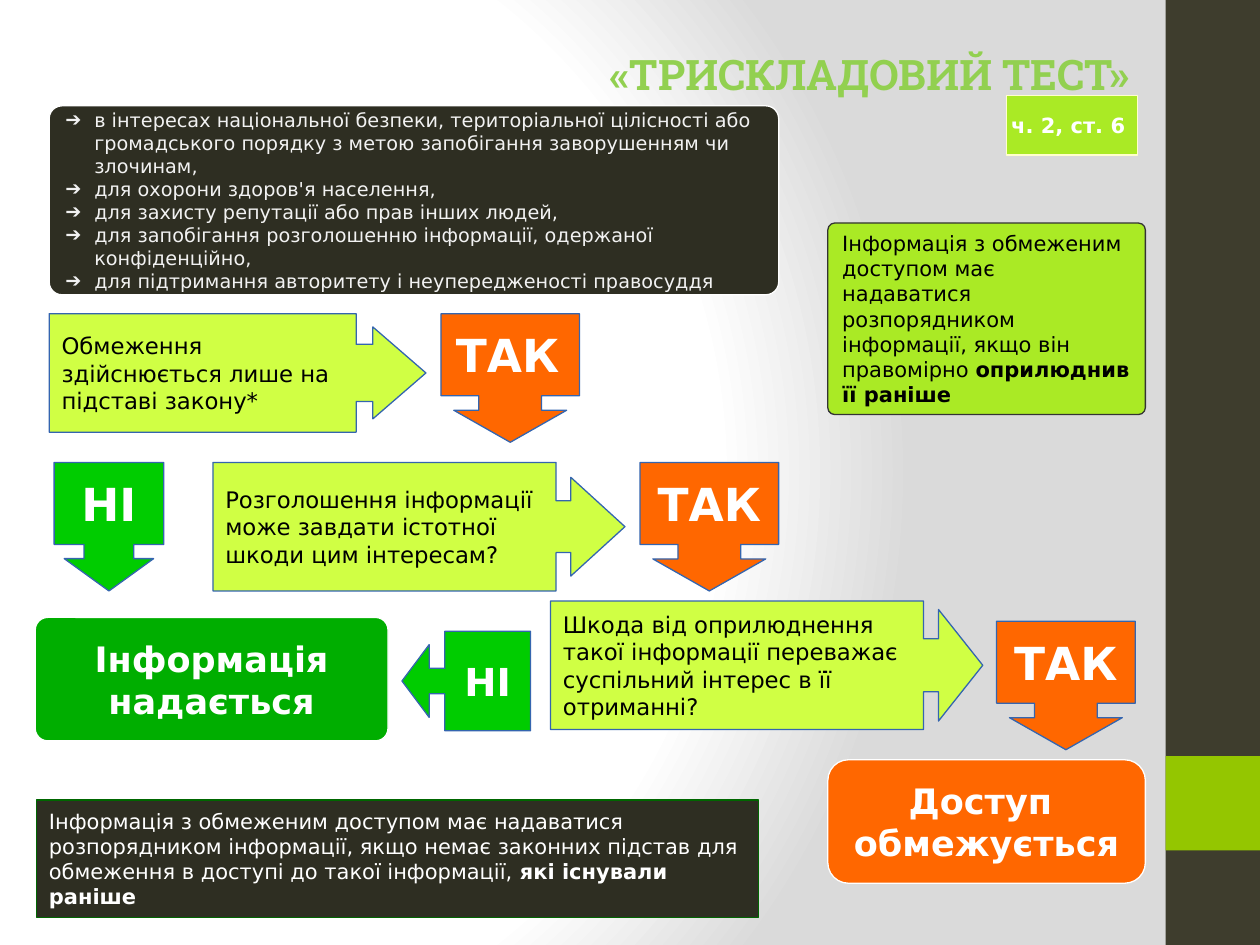
from dataclasses import dataclass

from pptx import Presentation
from pptx.dml.color import RGBColor
from pptx.enum.shapes import MSO_SHAPE as Preset
from pptx.enum.text import MSO_ANCHOR as Anchor, PP_ALIGN as Align
from pptx.oxml import parse_xml
from pptx.oxml.ns import nsdecls
from pptx.oxml.xmlchemy import OxmlElement
from pptx.util import Inches, Pt

COLORS = {
    "white": "FFFFFF", "black": "000000", "pale": "F2F2F2", "gray": "DADADA",
    "dark": "2E2E22", "band": "3E3D2D", "accent": "94C600", "title": "92D050",
    "orange": "FF6700", "green": "00CC00", "grant": "00AE00", "lime": "AAEA25",
    "question": "D0FF44", "outline": "3465AF", "charcoal": "333333",
    "forest": "006600", "cream": "FFFFCC",
}
BODY_FONT = "DejaVu Sans"
YES_ADJUSTMENTS = (0.488, 0.439, 0.249, 0.638)


@dataclass(frozen=True)
class Label:
    lines: tuple[str, ...]
    size: int
    color: str = "white"
    bold: bool = False
    align: Align = Align.LEFT
    anchor: Anchor = Anchor.MIDDLE
    wrap: bool = True
    font: str = BODY_FONT
    bullet: str = ""
    bold_ending: str = ""


@dataclass(frozen=True)
class Block:
    preset: Preset
    box: tuple[float, float, float, float]
    fill: str
    line: str = ""
    adjustments: tuple[float, ...] = ()
    label: Label | None = None


def rgb(name: str) -> RGBColor:
    return RGBColor.from_string(COLORS[name])


def word(text: str, size: int = 26) -> Label:
    return Label((text,), size, bold=True, align=Align.CENTER, wrap=False)


def outcome(*lines: str) -> Label:
    return Label(lines, 20, bold=True, align=Align.CENTER)


def yes(left: float, top: float, label: Label | None = None) -> Block:
    return Block(Preset.DOWN_ARROW_CALLOUT, (left, top, 1.1, 1.02), "orange",
                 "outline", YES_ADJUSTMENTS, label)


def question(box: tuple[float, float, float, float],
             adjustments: tuple[float, ...], text: str) -> Block:
    return Block(Preset.RIGHT_ARROW_CALLOUT, box, "question", "outline",
                 adjustments, Label((text,), 13, "black"))


def add_bullet(paragraph, symbol: str) -> None:
    properties = paragraph._p.get_or_add_pPr()
    properties.set("marL", str(Inches(0.23)))
    properties.set("indent", str(Inches(-0.23)))
    font = OxmlElement("a:buFont")
    font.set("typeface", BODY_FONT)
    bullet = OxmlElement("a:buChar")
    bullet.set("char", symbol)
    properties.insert(0, font)
    properties.insert(1, bullet)


def write_label(shape, label: Label) -> None:
    frame = shape.text_frame
    frame.word_wrap = label.wrap
    frame.vertical_anchor = label.anchor
    for index, line in enumerate(label.lines):
        paragraph = frame.add_paragraph() if index else frame.paragraphs[0]
        paragraph.alignment = label.align
        font = paragraph.font
        font.name, font.size, font.bold = label.font, Pt(label.size), label.bold
        font.color.rgb = rgb(label.color)
        paragraph.add_run().text = line
        if label.bold_ending:
            ending = paragraph.add_run()
            ending.text = label.bold_ending
            ending.font.bold = True
        if label.bullet:
            add_bullet(paragraph, label.bullet)


def add_block(slide, block: Block) -> None:
    shape = slide.shapes.add_shape(block.preset, *map(Inches, block.box))
    shape.shadow.inherit = False
    for index, value in enumerate(block.adjustments):
        shape.adjustments[index] = value
    shape.fill.solid()
    shape.fill.fore_color.rgb = rgb(block.fill)
    if block.line:
        shape.line.color.rgb = rgb(block.line)
        shape.line.width = Pt(0.75)
    else:
        shape.line.fill.background()
    if block.label:
        write_label(shape, block.label)


def add_text(slide, box: tuple[float, float, float, float], label: Label) -> None:
    write_label(slide.shapes.add_textbox(*map(Inches, box)), label)


def set_background(slide) -> None:
    stops = "".join(
        f'<a:gs pos="{position * 1000}"><a:srgbClr val="{COLORS[color]}"/></a:gs>'
        for position, color in ((0, "white"), (75, "white"), (100, "gray")))
    slide._element.cSld.insert(0, parse_xml(
        f'<p:bg {nsdecls("p", "a")}><p:bgPr><a:gradFill><a:gsLst>{stops}</a:gsLst>'
        '<a:path path="circle"><a:fillToRect l="20000" t="50000" r="100000" b="50000"/>'
        '</a:path></a:gradFill><a:effectLst/></p:bgPr></p:bg>'))


INTERESTS = Label((
    "в інтересах національної безпеки, територіальної цілісності або "
    "громадського порядку з метою запобігання заворушенням чи злочинам,",
    "для охорони здоров'я населення,",
    "для захисту репутації або прав інших людей,",
    "для запобігання розголошенню інформації, одержаної конфіденційно,",
    "для підтримання авторитету і неупередженості правосуддя",
), 11, "pale", bullet="➔")
PUBLISHED = Label((
    "Інформація з обмеженим доступом має надаватися розпорядником інформації, "
    "якщо він правомірно ",), 12, "black", bold_ending="оприлюднив її раніше")
NO_GROUNDS = Label((
    "Інформація з обмеженим доступом має надаватися розпорядником інформації, "
    "якщо немає законних підстав для обмеження в доступі до такої інформації, ",
), 12, bold_ending="які існували раніше")
ARTICLE = Label(("ч. 2, ст. 6",), 12, bold=True, align=Align.RIGHT, wrap=False)
TITLE = Label(("«ТРИСКЛАДОВИЙ ТЕСТ»",), 24, "title", True, Align.CENTER,
              font="Roboto Slab")
FIRST_YES = Label(("ТАК",), 26, bold=True, align=Align.CENTER,
                  anchor=Anchor.TOP, wrap=False)

BLOCKS = (
    Block(Preset.RECTANGLE, (9.25, 0, 0.75, 7.5), "band"),
    Block(Preset.RECTANGLE, (9.25, 6, 0.75, 0.75), "accent"),
    yes(3.5, 2.49),
    Block(Preset.ROUNDED_RECTANGLE, (6.57, 6.03, 2.52, 0.98), "orange", "white",
          (0.167,), outcome("Доступ ", "обмежується")),
    Block(Preset.ROUNDED_RECTANGLE, (0.39, 0.84, 5.79, 1.5), "dark", "white",
          (0.068,), INTERESTS),
    Block(Preset.ROUNDED_RECTANGLE, (6.57, 1.77, 2.52, 1.52), "lime", "charcoal",
          (0.036,), PUBLISHED),
    Block(Preset.ROUNDED_RECTANGLE, (0.28, 4.9, 2.8, 0.98), "grant", "white",
          (0.102,), outcome("Інформація", "надається")),
    Block(Preset.ROUNDED_RECTANGLE, (0.29, 6.35, 5.73, 0.93), "dark", "forest",
          (0,), NO_GROUNDS),
    question((0.39, 2.49, 2.99, 0.94), (0.483, 0.388, 0.448, 0.815),
             "Обмеження здійснюється лише на підставі закону*"),
    question((1.69, 3.67, 3.27, 1.02), (0.403, 0.384, 0.421, 0.833),
             "Розголошення інформації може завдати істотної шкоди цим інтересам?"),
    question((4.37, 4.77, 3.43, 1.02), (0.413, 0.434, 0.344, 0.863),
             "Шкода від оприлюднення такої інформації переважає суспільний "
             "інтерес в її отриманні?"),
    yes(5.08, 3.67, word("ТАК")),
    Block(Preset.DOWN_ARROW_CALLOUT, (0.43, 3.67, 0.87, 1.02), "green", "outline",
          (0.453, 0.408, 0.295, 0.638), word("НІ")),
    Block(Preset.LEFT_ARROW_CALLOUT, (3.19, 5.01, 1.02, 0.79), "green", "outline",
          (0.256, 0.365, 0.274, 0.667), word("НІ", 22)),
    yes(7.91, 4.93, word("ТАК")),
    Block(Preset.RECTANGLE, (7.99, 0.76, 1.04, 0.47), "lime", "cream",
          label=ARTICLE),
)


def main() -> None:
    presentation = Presentation()
    presentation.slide_width, presentation.slide_height = Inches(10), Inches(7.5)
    slide = presentation.slides.add_slide(presentation.slide_layouts[6])
    set_background(slide)
    for block in BLOCKS:
        add_block(slide, block)
    add_text(slide, (3.48, 2.55, 1.1, 0.57), FIRST_YES)
    add_text(slide, (4.72, 0.2, 4.37, 0.77), TITLE)
    presentation.save("out.pptx")


if __name__ == "__main__":
    main()
